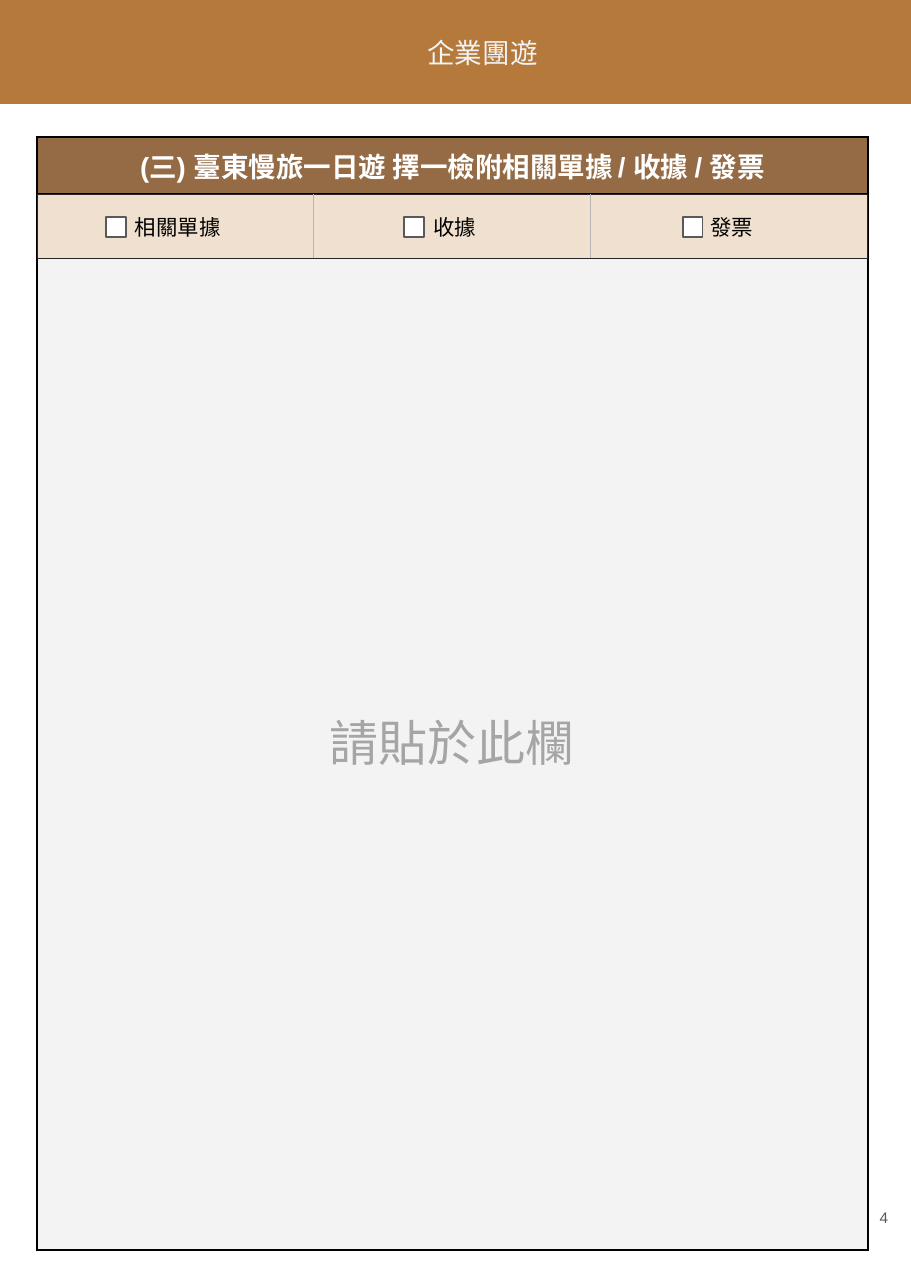
from lxml.etree import SubElement
from pptx import Presentation
from pptx.dml.color import RGBColor
from pptx.enum.shapes import MSO_SHAPE
from pptx.enum.text import MSO_ANCHOR, MSO_AUTO_SIZE, PP_ALIGN
from pptx.oxml.ns import qn
from pptx.util import Pt

PX = 8298
COLORS = {
    "band": "B5793C", "head": "956B45", "option": "F0E0CF", "pale": "F3F3F3",
    "white": "FFFFFF", "black": "000000", "dark": "262626", "rule": "B7B7B7",
    "hint": "A5A5A5", "gray": "595959",
}


def write(frame, text, size=18, color="black", font="Arial", bold=False,
          align=PP_ALIGN.CENTER, spacing=None):
    """Append a formatted run to the first paragraph of the frame."""
    line = frame.paragraphs[0]
    line.alignment = align
    if spacing:
        line.line_spacing = spacing
    run = line.add_run()
    run.text = text
    run.font.size = Pt(size)
    run.font.name = font
    run.font.bold = bold
    run.font.color.rgb = RGBColor.from_string(COLORS[color])


def style(cell, fill, width, edges):
    """Fill and center a cell; edges are left, right, top, bottom colors."""
    cell.vertical_anchor = MSO_ANCHOR.MIDDLE
    props = cell._tc.get_or_add_tcPr()
    for side, color in zip(("lnL", "lnR", "lnT", "lnB"), edges):
        edge = SubElement(props, qn(f"a:{side}"), w=str(Pt(width)))
        solid = SubElement(edge, qn("a:solidFill"))
        SubElement(solid, qn("a:srgbClr"), val=COLORS[color])
    cell.fill.solid()
    cell.fill.fore_color.rgb = RGBColor.from_string(COLORS[fill])


deck = Presentation()
deck.slide_width, deck.slide_height = 911 * PX, 1288 * PX
slide = deck.slides.add_slide(deck.slide_layouts[5])
shapes = slide.shapes

# Page header
band = shapes.add_shape(MSO_SHAPE.RECTANGLE, 0, 0, 911 * PX, 104 * PX)
band.shadow.inherit = False
band.fill.solid()
band.fill.fore_color.rgb = RGBColor.from_string(COLORS["band"])
band.line.fill.background()
shapes._spTree.insert(2, band._element)

title = shapes.title
title.left, title.top, title.width, title.height = [n * PX for n in (260, 25, 445, 104)]
frame = title.text_frame
frame.auto_size = MSO_AUTO_SIZE.NONE
frame.vertical_anchor = MSO_ANCHOR.TOP
frame.margin_top = frame.margin_bottom = 11 * PX
write(frame, "企業團遊", color="pale", font="Roboto")

# Receipt area
form = shapes.add_table(2, 1, 37 * PX, 137 * PX, 831 * PX, 1113 * PX).table
form.first_row = form.horz_banding = False
for row, height, fill in zip(form.rows, (57, 1056), ("head", "pale")):
    row.height = height * PX
    style(row.cells[0], fill, 1, ["black"] * 4)
head, area = form.cell(0, 0).text_frame, form.cell(1, 0).text_frame
for text, size in (("(三) 臺東慢旅一日遊 擇一檢附相關單據", 18), (" ", 14), ("/ 收據 / 發票", 18)):
    write(head, text, size=size, color="white", bold=True)
write(area, "請貼於此欄", size=32, color="hint", spacing=1.5)

# Page number
page = shapes.add_textbox(844 * PX, 1168 * PX, 55 * PX, 98 * PX).text_frame
page.word_wrap = True
page.vertical_anchor = MSO_ANCHOR.MIDDLE
write(page, "4", size=10, color="gray", align=PP_ALIGN.RIGHT)

# Receipt types with their check boxes
types = shapes.add_table(1, 3, 37 * PX, 194 * PX, 831 * PX, 64 * PX).table
types.first_row = types.horz_banding = False
options = ((" 相關單據", 106, "dark", "rule"), (" 收據", 404, "rule", "rule"),
           (" 發票", 683, "rule", "dark"))
for col, (text, left, start, end) in enumerate(options):
    cell = types.cell(0, col)
    style(cell, "option", 0.75, (start, end, "dark", "dark"))
    write(cell.text_frame, text, size=14)
    box = shapes.add_shape(MSO_SHAPE.RECTANGLE, left * PX, 217 * PX, 20 * PX, 20 * PX)
    box.shadow.inherit = False
    box.fill.solid()
    box.fill.fore_color.rgb = RGBColor.from_string(COLORS["white"])
    box.line.color.rgb = RGBColor.from_string(COLORS["gray"])
    box.line.width = Pt(0.75)

deck.save("out.pptx")
